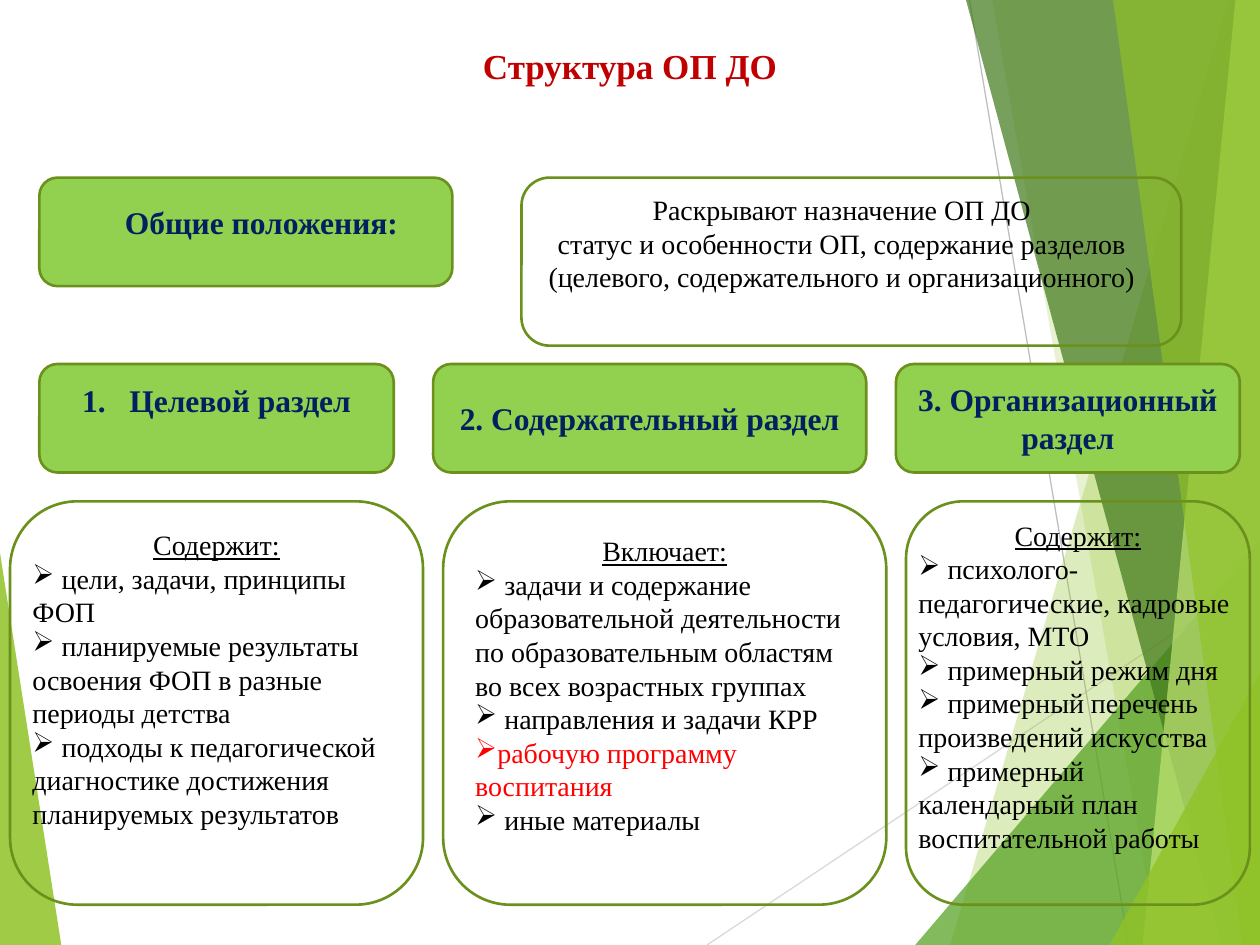
"""Builds the slide on the structure of the preschool educational programme."""
from lxml.etree import SubElement
from pptx import Presentation
from pptx.dml.color import RGBColor
from pptx.enum.shapes import MSO_CONNECTOR as Connector, MSO_SHAPE as Shape
from pptx.enum.text import MSO_ANCHOR as Anchor, MSO_AUTO_SIZE as AutoSize, PP_ALIGN as Align
from pptx.oxml.ns import qn
from pptx.util import Pt

WIDTH, HEIGHT = 720, 540
COLORS = {
    "title": "C00000", "heading": "002060", "text": "000000", "accent": "FF0000",
    "box": "92D050", "outline": "6B901C", "lime": "90C226", "green": "54A021",
    "dark": "3F7819", "pale": "C0E474", "ray": "D9D9D9", "ray dark": "BFBFBF",
}
FACETS = [
    ("lime", 30, [(702, 0), (543, HEIGHT), (WIDTH, HEIGHT), (WIDTH, 0)]),
    ("lime", 20, [(567, 0), (662, HEIGHT), (WIDTH, HEIGHT), (WIDTH, 0)]),
    ("green", 72, [(523, HEIGHT), (WIDTH, 309), (WIDTH, HEIGHT)]),
    ("dark", 70, [(552, 0), (698, HEIGHT), (WIDTH, HEIGHT), (WIDTH, 0)]),
    ("pale", 70, [(706, 0), (653, HEIGHT), (WIDTH, HEIGHT), (WIDTH, 0)]),
    ("lime", 65, [(636, 0), (710, HEIGHT), (WIDTH, HEIGHT), (WIDTH, 0)]),
    ("lime", 80, [(634, HEIGHT), (WIDTH, 385), (WIDTH, HEIGHT)]),
]
GOALS = [
    ("Содержит:", "lead"),
    (" цели, задачи, принципы ФОП", "bullet"),
    (" планируемые результаты освоения ФОП в разные периоды детства", "bullet"),
    (" подходы к педагогической диагностике достижения планируемых результатов", "bullet"),
]
CONTENT = [
    ("Включает:", "lead"),
    (" задачи и содержание образовательной деятельности по образовательным областям "
     "во всех возрастных группах", "bullet"),
    (" направления и задачи КРР", "bullet"),
    ("рабочую программу воспитания", "accent"),
    (" иные материалы", "bullet"),
]
ORGANIZATION = [
    ("Содержит:", "lead"),
    (" психолого-педагогические, кадровые условия, МТО", "bullet"),
    (" примерный режим дня", "bullet"),
    (" примерный перечень произведений искусства", "bullet"),
    (" примерный календарный план воспитательной работы", "bullet"),
]
PURPOSE = [
    ("Раскрывают назначение ОП ДО", "plain"),
    ("статус и особенности ОП, содержание разделов "
     "(целевого, содержательного и организационного)", "plain"),
]


class SlideBuilder:
    """Holds the style and the current slide."""

    font = "Times New Roman"
    sizes = {"title": 20, "heading": 18, "number": 18}
    text_size = 16
    bullet = "➢"
    number_indent = 27

    def __init__(self, presentation):
        self.slide = presentation.slides.add_slide(presentation.slide_layouts[5])
        self.shapes = self.slide.shapes

    def color(self, name):
        return RGBColor.from_string(COLORS[name])

    def title(self, text, *place):
        title = self.shapes.title
        title.left, title.top, title.width, title.height = map(Pt, place)
        title.text_frame.vertical_anchor = Anchor.TOP
        self.fill_text(title.text_frame, [(text, "title")])
        title._element.getparent().append(title._element)

    def ray(self, start, end, color):
        line = self.shapes.add_connector(Connector.STRAIGHT, *map(Pt, start + end))
        line.line.color.rgb = self.color(color)
        line.line.width = Pt(0.75)
        SubElement(line._element.spPr, qn("a:effectLst"))

    def facet(self, color, opacity, points):
        start, *rest = [(Pt(x), Pt(y)) for x, y in points]
        builder = self.shapes.build_freeform(*start)
        builder.add_line_segments(rest)
        shape = builder.convert_to_shape()
        shape.shadow.inherit = False
        shape.fill.solid()
        shape.fill.fore_color.rgb = self.color(color)
        shape.line.fill.background()
        fill = shape._element.spPr.find(qn("a:solidFill")).find(qn("a:srgbClr"))
        SubElement(fill, qn("a:alpha"), val=str(opacity * 1000))

    def box(self, *place, filled=False, items=()):
        shape = self.shapes.add_shape(Shape.ROUNDED_RECTANGLE, *map(Pt, place))
        shape.shadow.inherit = False
        if filled:
            shape.fill.solid()
            shape.fill.fore_color.rgb = self.color("box")
        else:
            shape.fill.background()
        shape.line.color.rgb = self.color("outline")
        shape.line.width = Pt(1.5)
        if items:
            shape.text_frame.vertical_anchor = Anchor.MIDDLE
            self.fill_text(shape.text_frame, items)
        return shape

    def text(self, *place, items):
        frame = self.shapes.add_textbox(*map(Pt, place)).text_frame
        frame.auto_size = AutoSize.SHAPE_TO_FIT_TEXT
        self.fill_text(frame, items)

    def fill_text(self, frame, items):
        frame.word_wrap = True
        for index, (text, kind) in enumerate(items):
            paragraph = frame.add_paragraph() if index else frame.paragraphs[0]
            paragraph.text = text
            listed = kind in ("bullet", "accent")
            paragraph.alignment = Align.LEFT if listed else Align.CENTER
            font = paragraph.font
            font.name = self.font
            font.size = Pt(self.sizes.get(kind, self.text_size))
            font.bold = kind in self.sizes
            font.underline = kind == "lead"
            name = "heading" if kind == "number" else kind
            font.color.rgb = self.color(name if name in COLORS else "text")
            if listed:
                self.mark(paragraph, "a:buChar", 0, char=self.bullet)
            elif kind == "number":
                self.mark(paragraph, "a:buAutoNum", self.number_indent, type="arabicPeriod")

    def mark(self, paragraph, tag, indent, **attributes):
        properties = paragraph._p.get_or_add_pPr()
        properties.set("marL", str(int(Pt(indent))))
        properties.set("indent", str(-int(Pt(indent))))
        properties.insert(0, SubElement(properties, qn(tag), **attributes))


def main():
    presentation = Presentation()
    presentation.slide_width, presentation.slide_height = Pt(WIDTH), Pt(HEIGHT)
    builder = SlideBuilder(presentation)

    builder.facet("lime", 85, [(0, 316), (35, HEIGHT), (0, HEIGHT)])
    builder.ray((404, HEIGHT), (WIDTH, 329), "ray")
    builder.ray((554, 0), (645, HEIGHT), "ray dark")
    for facet in FACETS:
        builder.facet(*facet)

    builder.title("Структура ОП ДО", 36, 21.6, 648, 68.4)
    header_height, header_top = 62, 208
    body_top, body_height = 286.5, 230.5

    builder.box(22.5, 101.5, 236, header_height, filled=True)
    builder.box(298, 101.5, 377, 96)
    builder.box(22.5, header_top, 202.5, header_height, filled=True)
    builder.text(39.5, 112.5, 224.5, 29, items=[("Общие положения: ", "heading")])
    builder.text(298, 106.5, 366, 65.5, items=PURPOSE)
    builder.text(28, 214, 191.5, 29, items=[("Целевой раздел", "number")])

    builder.box(5.75, body_top, 236, body_height)
    builder.text(11.5, 298, 224.5, 181.5, items=GOALS)

    builder.box(247.5, header_top, 247.5, header_height, filled=True,
                items=[("2. Содержательный раздел", "heading")])
    content = builder.box(253.25, body_top, 253.25, body_height, items=CONTENT)
    content.text_frame.margin_bottom = Pt(24.3)

    builder.box(512, header_top, 196.5, header_height, filled=True,
                items=[("3. Организационный раздел", "heading")])
    builder.box(517.75, body_top, 196.5, body_height)
    builder.text(517.75, 292.5, 196.5, 223, items=ORGANIZATION)

    presentation.save("out.pptx")


if __name__ == "__main__":
    main()
